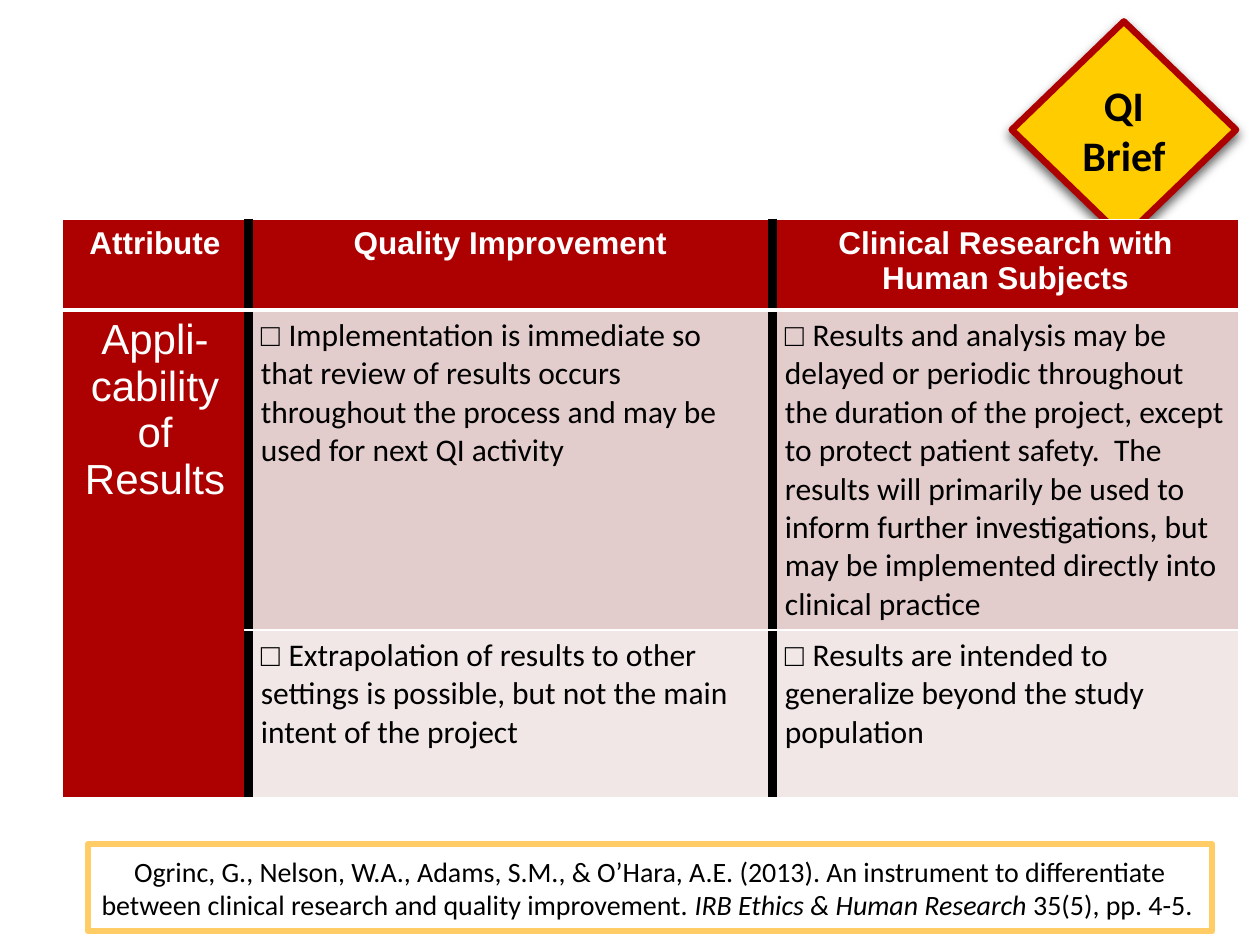
import pptx
import pptx.dml.color
import pptx.enum.shapes
import pptx.enum.text
import pptx.oxml
import pptx.oxml.ns
import pptx.util

Inches = pptx.util.Inches
RGBColor = pptx.dml.color.RGBColor
Shape = pptx.enum.shapes.MSO_SHAPE
Align = pptx.enum.text.PP_ALIGN
Anchor = pptx.enum.text.MSO_ANCHOR

RED = RGBColor(0xAD, 0x01, 0x01)
YELLOW = RGBColor(0xFF, 0xCC, 0x00)
AMBER = RGBColor(0xFF, 0xCC, 0x66)
ROSE = RGBColor(0xE3, 0xCC, 0xCC)
PALE_ROSE = RGBColor(0xF1, 0xE7, 0xE7)
BLACK = RGBColor(0, 0, 0)
WHITE = RGBColor(0xFF, 0xFF, 0xFF)

COLUMN_WIDTHS = (1.48, 4.16, 3.7)
ROW_HEIGHTS = (0.72, 2.5, 1.33)
HEADINGS = ("Attribute", "Quality Improvement", "Clinical Research with Human Subjects")
CRITERIA = (
    (
        "Implementation is immediate so that review of results occurs throughout "
        "the process and may be used for next QI activity",
        "Results and analysis may be delayed or periodic throughout the duration of "
        "the project, except to protect patient safety.  The results will primarily "
        "be used to inform further investigations, but may be implemented directly "
        "into clinical practice",
    ),
    (
        "Extrapolation of results to other settings is possible, but not the main "
        "intent of the project",
        "Results are intended to generalize beyond the study population",
    ),
)


def add_span(para, text, size=18, font="Calibri", color=BLACK, bold=False, italic=False):
    span = para.add_run()
    span.text = text
    span.font.size = pptx.util.Pt(size)
    span.font.name = font
    span.font.color.rgb = color
    span.font.bold = bold
    span.font.italic = italic


def add_drop_shadow(shape):
    """Put a soft black shadow straight below the shape."""
    effects = pptx.oxml.parse_xml(
        f'<a:effectLst {pptx.oxml.ns.nsdecls("a")}>'
        '<a:outerShdw blurRad="76200" dist="38100" dir="5400000" rotWithShape="0">'
        '<a:srgbClr val="000000"><a:alpha val="60000"/></a:srgbClr>'
        "</a:outerShdw></a:effectLst>"
    )
    properties = shape._element.spPr
    for old in properties.findall(pptx.oxml.ns.qn("a:effectLst")):
        properties.remove(old)
    properties.append(effects)


def set_borders(cell, row, column):
    """Draw black inner verticals and white outer and horizontal rules."""
    thin, thick = (WHITE, 1), (BLACK, 6)
    borders = {
        "lnL": thick if column > 0 else thin,
        "lnR": thick if column < len(COLUMN_WIDTHS) - 1 else thin,
        "lnT": (WHITE, 3) if row == 1 else thin,
        "lnB": (WHITE, 3) if row == 0 else thin,
    }
    properties = cell._tc.get_or_add_tcPr()
    for tag, (color, width) in borders.items():
        properties.append(pptx.oxml.parse_xml(
            f'<a:{tag} {pptx.oxml.ns.nsdecls("a")} w="{pptx.util.Pt(width)}">'
            f'<a:solidFill><a:srgbClr val="{color}"/></a:solidFill></a:{tag}>'
        ))


class SlideBuilder:
    def __init__(self, page):
        self.page = page

    def box(self, kind, left, top, width, height, fill, line):
        """Add an outlined shape and return it with its centred paragraph."""
        box = self.page.shapes.add_shape(
            kind, Inches(left), Inches(top), Inches(width), Inches(height))
        box.shadow.inherit = False
        box.fill.solid()
        box.fill.fore_color.rgb = fill
        box.line.color.rgb = line
        box.line.width = pptx.util.Pt(3.75)
        box.text_frame.word_wrap = True
        box.text_frame.vertical_anchor = Anchor.MIDDLE
        para = box.text_frame.paragraphs[0]
        para.alignment = Align.CENTER
        return box, para

    def table(self, left, top):
        table = self.page.shapes.add_table(
            len(ROW_HEIGHTS), len(COLUMN_WIDTHS), Inches(left), Inches(top),
            Inches(sum(COLUMN_WIDTHS)), Inches(sum(ROW_HEIGHTS))).table
        for column, width in zip(table.columns, COLUMN_WIDTHS):
            column.width = Inches(width)
        for row, height in zip(table.rows, ROW_HEIGHTS):
            row.height = Inches(height)
        fills = (RED, ROSE, PALE_ROSE)
        for r, row in enumerate(table.rows):
            for c, cell in enumerate(row.cells):
                set_borders(cell, r, c)
                cell.fill.solid()
                cell.fill.fore_color.rgb = RED if c == 0 else fills[r]
        table.cell(1, 0).merge(table.cell(2, 0))
        return table

    def label(self, cell, text, **style):
        para = cell.text_frame.paragraphs[0]
        para.alignment = Align.CENTER
        add_span(para, text, font="Arial", color=WHITE, **style)

    def criterion(self, cell, text):
        para = cell.text_frame.paragraphs[0]
        add_span(para, "□ ", font="Arial", bold=True)
        add_span(para, text)


def main():
    deck = pptx.Presentation()
    deck.slide_width, deck.slide_height = Inches(10), Inches(7.5)
    builder = SlideBuilder(deck.slides.add_slide(deck.slide_layouts[6]))

    sign, para = builder.box(
        Shape.FLOWCHART_DECISION, 8.03, 0.17, 1.78, 1.72, YELLOW, RED)
    add_drop_shadow(sign)
    add_span(para, "QI Brief", size=24, bold=True)

    table = builder.table(0.49, 1.74)
    for column, heading in enumerate(HEADINGS):
        builder.label(table.cell(0, column), heading, bold=True)
    builder.label(table.cell(1, 0), "Appli-cability of Results", size=24)
    for r, texts in enumerate(CRITERIA, start=1):
        for c, text in enumerate(texts, start=1):
            builder.criterion(table.cell(r, c), text)

    _, para = builder.box(Shape.RECTANGLE, 0.7, 6.7, 8.92, 0.69, WHITE, AMBER)
    add_span(para, "Ogrinc, G., Nelson, W.A., Adams, S.M., & O’Hara, A.E. (2013). "
             "An instrument to differentiate between clinical research and quality "
             "improvement. ", size=16)
    add_span(para, "IRB Ethics & Human Research ", size=16, italic=True)
    add_span(para, "35(5), pp. 4-5. ", size=16)

    deck.save("out.pptx")


if __name__ == "__main__":
    main()
